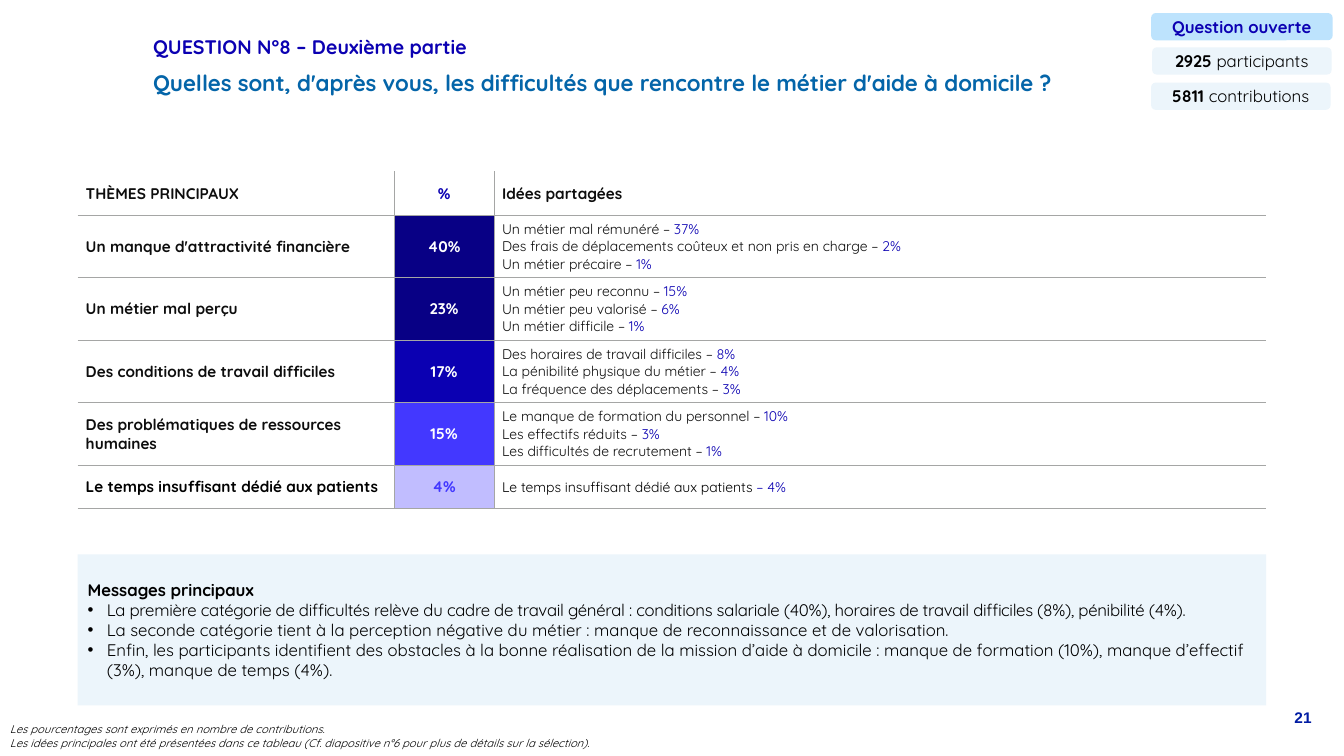
from lxml import etree
from pptx import Presentation
from pptx import util as u
from pptx.dml.color import RGBColor
from pptx.enum import shapes, text
from pptx.oxml.ns import qn

HUES = {"ink": "000000", "soft": "0D0D0D", "white": "FFFFFF", "blue": "0B00B2",
        "teal": "0465A9", "page": "011CA3", "pale": "ECF5FB", "sky": "BDE3FD",
        "navy": "080085", "violet": "4338FF", "lilac": "C1BDFF", "rule": "A5A6A5"}
LEFT, WIDTH = 5.78, 88.43
COLS = (23.55, 7.43, 57.45)
HEADS = ("THÈMES PRINCIPAUX", "%", "Idées partagées")
THEMES = [
    ("Un manque d'attractivité financière", "40%", "navy", "white",
     ["Un métier mal rémunéré – |37%",
      "Des frais de déplacements coûteux et non pris en charge – |2%",
      "Un métier précaire – |1%"]),
    ("Un métier mal perçu", "23%", "navy", "white",
     ["Un métier peu reconnu – |15%", "Un métier peu valorisé – |6%",
      "Un métier difficile – |1%"]),
    ("Des conditions de travail difficiles", "17%", "blue", "white",
     ["Des horaires de travail difficiles – |8%",
      "La pénibilité physique du métier – |4%",
      "La fréquence des déplacements – |3%"]),
    ("Des problématiques de ressources humaines", "15%", "violet", "white",
     ["Le manque de formation du personnel – |10%",
      "Les effectifs réduits – |3%", "Les difficultés de recrutement – |1%"]),
    ("Le temps insuffisant dédié aux patients", "4%", "lilac", "violet",
     ["Le temps insuffisant dédié aux patients |– 4%"]),
]
BADGES = [
    (85.65, 1.73, 13.5, "sky", "Question ouverte", [("blue", True)]),
    (85.73, 6.27, 13.35, "pale", "2925 |participants", [("ink", True), ("ink", False)]),
    (85.65, 10.93, 13.35, "pale", "5811 |contributions", [("ink", True), ("ink", False)]),
]
NEWS = [
    "Messages principaux",
    "La première catégorie de difficultés relève du cadre de travail général : conditions "
    "salariale (40%), horaires de travail difficiles (8%), pénibilité (4%).",
    "La seconde catégorie tient à la perception négative du métier : manque de "
    "reconnaissance et de valorisation.",
    "Enfin, les participants identifient des obstacles à la bonne réalisation de la mission "
    "d’aide à domicile : manque de formation (10%), manque d’effectif (3%), manque de "
    "temps (4%).",
]
NOTES = [
    "Les pourcentages sont exprimés en nombre de contributions.",
    "Les idées principales ont été présentées dans ce tableau (Cf. diapositive n°6 pour plus "
    "de détails sur la sélection).",
]
ALIGN = {"l": text.PP_ALIGN.LEFT, "c": text.PP_ALIGN.CENTER,
         "r": text.PP_ALIGN.RIGHT, "j": text.PP_ALIGN.JUSTIFY}


class Deck:
    """Draws styled elements placed in percent shares of the slide."""

    def __init__(self):
        self.show = Presentation()
        self.show.slide_width = u.Inches(13.33)
        self.show.slide_height = u.Inches(7.5)
        self.slide = self.show.slides.add_slide(self.show.slide_layouts[6])

    def wide(self, share):
        return round(self.show.slide_width * share / 100)

    def high(self, share):
        return round(self.show.slide_height * share / 100)

    def place(self, left, top, width, height):
        return self.wide(left), self.high(top), self.wide(width), self.high(height)

    def tint(self, fill, hue):
        fill.solid()
        fill.fore_color.rgb = RGBColor.from_string(HUES[hue])

    def letter(self, frame, lines, size, looks, align="l", face="Quicksand",
               slant=False, pitch=None):
        for i, line in enumerate(lines):
            para = frame.add_paragraph() if i else frame.paragraphs[0]
            para.alignment = ALIGN[align]
            para.line_spacing = pitch
            for part, (hue, bold) in zip(line.split("|"), looks):
                run = para.add_run()
                run.text = part
                font = run.font
                font.name, font.size = face, u.Pt(size)
                font.bold, font.italic = bold, slant
                font.color.rgb = RGBColor.from_string(HUES[hue])

    def label(self, box, lines, size, look, middle=False, **style):
        frame = self.slide.shapes.add_textbox(*self.place(*box)).text_frame
        frame.word_wrap = True
        if middle:
            frame.vertical_anchor = text.MSO_ANCHOR.MIDDLE
        self.letter(frame, lines, size, [look], **style)

    def panel(self, kind, box, hue, lines, looks, align="l"):
        shape = self.slide.shapes.add_shape(kind, *self.place(*box))
        shape.shadow.inherit = False
        self.tint(shape.fill, hue)
        shape.line.fill.background()
        frame = shape.text_frame
        frame.word_wrap = True
        frame.vertical_anchor = text.MSO_ANCHOR.MIDDLE
        self.letter(frame, lines, 12, looks, align)
        return frame

    def bullet(self, para):
        props = para._p.get_or_add_pPr()
        dent = u.Inches(0.19)
        props.set("marL", str(dent))
        props.set("indent", str(-dent))
        etree.SubElement(props, qn("a:buFont")).set("typeface", "Arial")
        etree.SubElement(props, qn("a:buChar")).set("char", "•")

    def border(self, cell, sides):
        props = cell._tc.get_or_add_tcPr()
        for side in "LRTB":
            line = etree.SubElement(props, qn("a:ln" + side), w=str(u.Pt(0.25)))
            if side in sides:
                fill = etree.SubElement(line, qn("a:solidFill"))
                etree.SubElement(fill, qn("a:srgbClr"), val=HUES["rule"])
            else:
                etree.SubElement(line, qn("a:noFill"))

    def cell(self, grid, row, col, lines, size, looks, hue=None):
        cell = grid.cell(row, col)
        sides = "B" + "T" * (row > 0) + "L" * (col > 0) + "R" * (col < 2)
        self.border(cell, sides)
        if hue:
            self.tint(cell.fill, hue)
        else:
            cell.fill.background()
        cell.margin_left = cell.margin_right = u.Inches(0.08)
        cell.margin_top, cell.margin_bottom = u.Inches(0.01), 0
        cell.vertical_anchor = text.MSO_ANCHOR.MIDDLE
        self.letter(cell.text_frame, lines, size, looks, "c" if col == 1 else "l")

    def table(self, top, short, tall):
        rows = [short] + [tall if len(theme[4]) > 1 else short for theme in THEMES]
        box = self.place(LEFT, top, WIDTH, sum(rows))
        grid = self.slide.shapes.add_table(len(rows), len(COLS), *box).table
        grid.first_row = grid.horz_banding = False
        for col, share in zip(grid.columns, COLS):
            col.width = self.wide(share)
        for row, share in zip(grid.rows, rows):
            row.height = self.high(share)
        for col, head in enumerate(HEADS):
            hue = "blue" if col == 1 else "soft"
            self.cell(grid, 0, col, [head], 11, [(hue, True)])
        for row, (name, rate, hue, ink, ideas) in enumerate(THEMES, 1):
            dark = "soft" if len(ideas) > 1 else "ink"
            self.cell(grid, row, 0, [name], 11, [(dark, True)])
            self.cell(grid, row, 1, [rate], 11, [(ink, True)], hue)
            self.cell(grid, row, 2, ideas, 10, [(dark, False), ("blue", False)])


def main():
    deck = Deck()
    deck.label((10.65, 8.8, 70.35, 4.8),
               ["Quelles sont, d'après vous, les difficultés que rencontre le métier "
                "d'aide à domicile ?"], 16, ("teal", True), middle=True, pitch=0.9)
    deck.label((10.65, 4.53, 86.25, 3.6), ["QUESTION N°8 – Deuxième partie"], 14,
               ("blue", True), middle=True, pitch=0.9)
    deck.table(22.67, 5.73, 8.27)
    kind = shapes.MSO_SHAPE
    frame = deck.panel(kind.RECTANGLE, (LEFT, 73.33, WIDTH, 20), "pale", NEWS,
                       [("ink", False)])
    head, *points = frame.paragraphs
    head.runs[0].font.bold = True
    for para in points:
        deck.bullet(para)
    points[0].runs[0]._r.get_or_add_rPr().set("spc", "-20")
    for left, top, width, hue, words, looks in BADGES:
        deck.panel(kind.ROUNDED_RECTANGLE, (left, top, width, 3.6), hue, [words],
                   looks, "c")
    deck.label((0, 94.93, 55.28, 4.93), NOTES, 8, ("ink", False), align="j", slant=True)
    deck.label((83.55, 93.07, 14.78, 6.93), ["21"], 11, ("page", True), align="r",
               face="Arial")
    deck.show.save("out.pptx")


if __name__ == "__main__":
    main()
